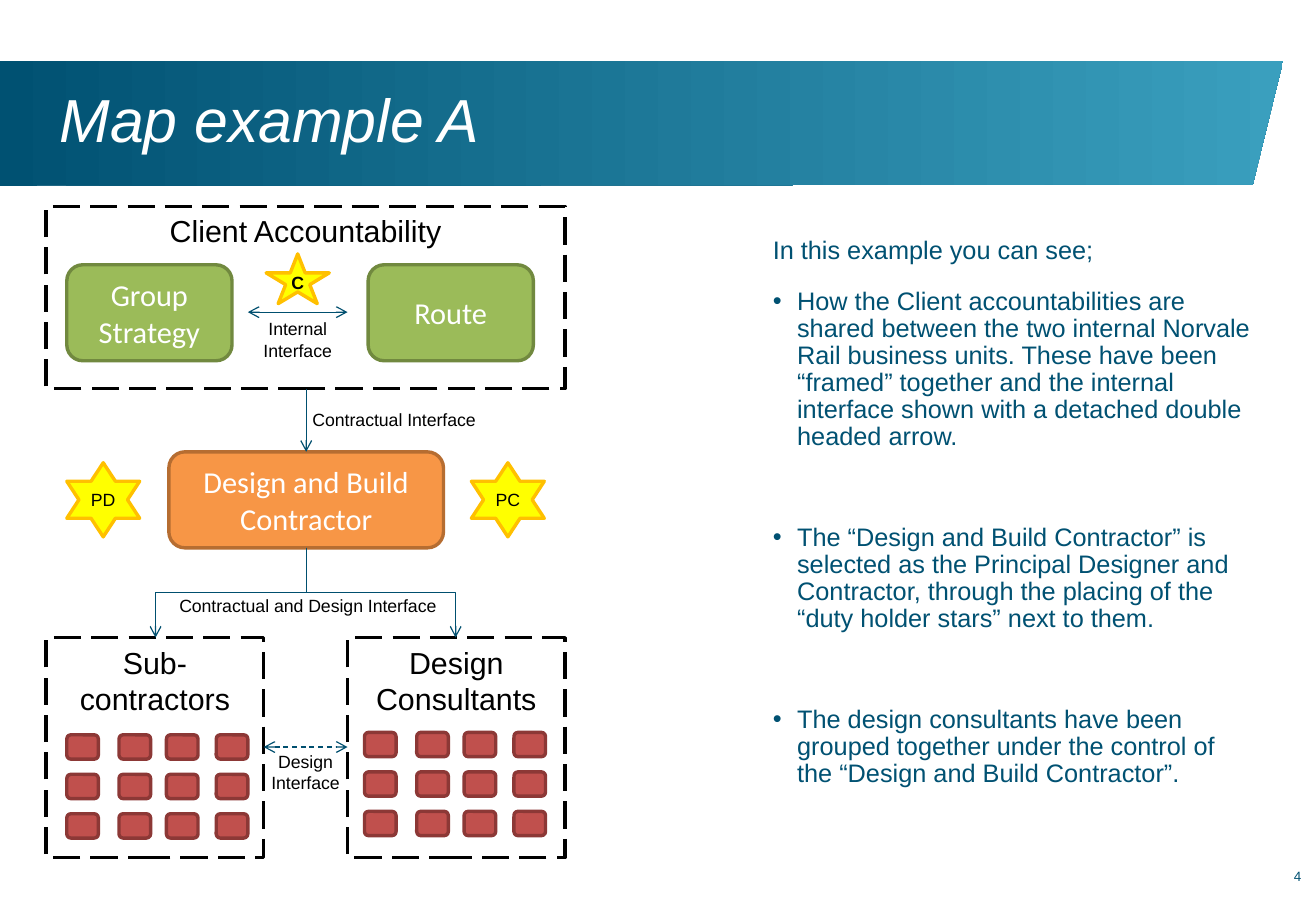
from lxml import etree
from pptx import Presentation
from pptx.dml.color import RGBColor
from pptx.enum.dml import MSO_LINE
from pptx.enum.shapes import MSO_CONNECTOR as Link, MSO_SHAPE as Shape
from pptx.enum.text import MSO_ANCHOR as Anchor, MSO_AUTO_SIZE, PP_ALIGN as Align
from pptx.oxml.ns import qn
from pptx.util import Inches, Pt

TEAL, LIGHT_TEAL, ARROW = "005172", "3A9FBE", "004F6F"
BLACK, WHITE = "000000", "FFFFFF"
GREEN, ORANGE = ("9BBB59", "71893F"), ("F79646", "B66D31")
RED, YELLOW = ("C0504D", "8C3836"), ("FFFF00", "FFC000")

TITLE = "Map example A"
INTRO = "In this example you can see;"
POINTS = [
    "How the Client accountabilities are shared between the two internal Norvale Rail "
    "business units. These have been “framed” together and the internal interface shown "
    "with a detached double headed arrow.",
    "The “Design and Build Contractor” is selected as the Principal Designer and "
    "Contractor, through the placing of the “duty holder stars” next to them.",
    "The design consultants have been grouped together under the control of the "
    "“Design and Build Contractor”.",
]
# Each entry: text, (left, top, width, height), then any colours
FRAMES = [
    ("Client Accountability", (0.38, 1.7, 4.27, 1.5)),
    ("Sub-contractors", (0.38, 5.25, 1.79, 1.81)),
    ("Design Consultants", (2.86, 5.25, 1.79, 1.81)),
]
UNITS = [
    ("Group Strategy", (0.55, 2.18, 1.36, 0.79), GREEN),
    ("Route", (3.03, 2.18, 1.36, 0.79), GREEN),
    ("Design and Build Contractor", (1.39, 3.72, 2.26, 0.79), ORANGE),
]
STARS = [
    ("C", (2.19, 2.09, 0.52, 0.41), Shape.STAR_5_POINT),
    ("PD", (0.55, 3.81, 0.6, 0.61), Shape.STAR_6_POINT),
    ("PC", (3.88, 3.81, 0.6, 0.61), Shape.STAR_6_POINT),
]
LABELS = [
    ("Internal Interface", (2.04, 2.57, 0.82, 0.45)),
    ("Contractual Interface", (2.43, 3.32, 1.63, 0.28)),
    ("Contractual and Design Interface", (1.36, 4.85, 2.35, 0.28)),
    ("Design\nInterface", (2.1, 6.13, 0.83, 0.45)),
]
# Each entry: start, end, double headed, dashed
ARROWS = [
    ((2.04, 2.57), (2.86, 2.57), True, False),
    ((2.17, 6.15), (2.86, 6.15), True, True),
    ((2.52, 3.2), (2.52, 3.72), False, False),
]
BRANCH_START, BRANCH_ENDS = (2.52, 4.51), [(3.75, 5.25), (1.28, 5.25)]
GRID_STARTS = [(0.55, 6.05), (3.0, 6.03)]
GRID_COLUMNS, GRID_ROWS, ROW_STEP = (0, 0.43, 0.82, 1.23), 3, 0.325
BLOCK_SIZE = (0.26, 0.2)


def colour(value):
    return RGBColor.from_string(value)


def inches(values):
    return [Inches(value) for value in values]


def write(holder, text, size=10.5, font="Arial", ink=BLACK, align=Align.CENTER,
          anchor=Anchor.TOP, bold=False, italic=False, wrap=True, inset=None,
          spacing=None, after=0):
    frame = holder.text_frame
    frame.text = text
    frame.auto_size = MSO_AUTO_SIZE.NONE
    frame.word_wrap = wrap
    frame.vertical_anchor = anchor
    if inset is not None:
        frame.margin_left = frame.margin_right = Inches(inset)
        frame.margin_top = frame.margin_bottom = Inches(inset)
    for para in frame.paragraphs:
        para.alignment = align
        para.space_before, para.space_after = Pt(0), Pt(after)
        if spacing:
            para.line_spacing = Pt(spacing)
        for span in para.runs:
            span.font.name, span.font.size = font, Pt(size)
            span.font.bold, span.font.italic = bold, italic
            span.font.color.rgb = colour(ink)


def add_box(page, kind, place, fill=None, line=BLACK):
    box = page.shapes.add_shape(kind, *inches(place))
    box.shadow.inherit = False
    if fill:
        box.fill.solid()
        box.fill.fore_color.rgb = colour(fill)
    else:
        box.fill.background()
        box.line.dash_style = MSO_LINE.LONG_DASH
    box.line.color.rgb = colour(line)
    box.line.width = Pt(2)
    return box


def add_arrow(page, kind, start, end, double=False, dashed=False):
    arrow = page.shapes.add_connector(kind, *inches(start + end))
    arrow.line.color.rgb = colour(ARROW)
    arrow.line.width = Pt(0.75)
    if dashed:
        arrow.line.dash_style = MSO_LINE.DASH
    line = arrow.line._get_or_add_ln()
    for tag in ("a:headEnd", "a:tailEnd") if double else ("a:tailEnd",):
        etree.SubElement(line, qn(tag), type="arrow")
    etree.SubElement(arrow._element.spPr, qn("a:effectLst"))
    return arrow


def add_branch(page, start, end):
    """Elbow arrow that leaves downwards: a sideways elbow turned by a quarter."""
    middle_x, middle_y = (start[0] + end[0]) / 2, (start[1] + end[1]) / 2
    half_drop, half_spread = (end[1] - start[1]) / 2, abs(end[0] - start[0]) / 2
    side, turn = (1, 270) if end[0] > start[0] else (-1, 90)
    arrow = add_arrow(page, Link.ELBOW,
                      (middle_x + side * half_drop, middle_y - half_spread),
                      (middle_x - side * half_drop, middle_y + half_spread))
    arrow._element.spPr.find(qn("a:xfrm")).set("rot", str(turn * 60000))


def add_band(page):
    builder = page.shapes.build_freeform(Inches(0), Inches(0.5))
    corners = [(10.56, 0.5), (10.31, 1.52), (0, 1.53)]
    builder.add_line_segments([inches(corner) for corner in corners], close=True)
    band = builder.convert_to_shape()
    band.shadow.inherit = False
    band.line.fill.background()
    band.fill.gradient()
    band.fill.gradient_angle = 0
    for stop, shade in zip(band.fill.gradient_stops, (TEAL, LIGHT_TEAL)):
        stop.color.rgb = colour(shade)
    page.shapes._spTree.insert(2, band._element)  # behind the title


def set_bullet(para, bullet):
    props = para._p.get_or_add_pPr()
    indent = Inches(0.2) if bullet else 0
    props.set("marL", str(indent))
    props.set("indent", str(-indent))
    if bullet:
        etree.SubElement(props, qn("a:buChar"), char="•")
    else:
        etree.SubElement(props, qn("a:buNone"))


def place_holder(holder, place):
    holder.left, holder.top, holder.width, holder.height = inches(place)


def main():
    deck = Presentation()
    deck.slide_width, deck.slide_height = inches((10.83, 7.5))
    page = deck.slides.add_slide(deck.slide_layouts[1])
    title, body = page.placeholders
    add_band(page)

    place_holder(title, (0.49, 0.66, 9.8, 0.7))
    write(title, TITLE, size=36, ink=WHITE, align=Align.LEFT, anchor=Anchor.MIDDLE,
          italic=True, inset=0, spacing=38)
    place_holder(body, (6.36, 1.96, 3.94, 4.92))
    write(body, "\n".join([INTRO, *POINTS]), size=15, ink=TEAL, align=Align.LEFT,
          inset=0, spacing=16, after=44)
    for number, para in enumerate(body.text_frame.paragraphs):
        set_bullet(para, bullet=number > 0)
    body.text_frame.paragraphs[0].space_after = Pt(14)

    for text, place in FRAMES:
        write(add_box(page, Shape.RECTANGLE, place), text, size=18)
    for text, place, colours in UNITS:
        unit = add_box(page, Shape.ROUNDED_RECTANGLE, place, *colours)
        write(unit, text, size=18, font="Calibri", ink=WHITE, anchor=Anchor.MIDDLE)
    for left, top in GRID_STARTS:
        for row in range(GRID_ROWS):
            for offset in GRID_COLUMNS:
                place = (left + offset, top + row * ROW_STEP, *BLOCK_SIZE)
                add_box(page, Shape.ROUNDED_RECTANGLE, place, *RED)

    for start, end, double, dashed in ARROWS:
        add_arrow(page, Link.STRAIGHT, start, end, double, dashed)
    for end in BRANCH_ENDS:
        add_branch(page, BRANCH_START, end)
    for text, place in LABELS:
        write(page.shapes.add_textbox(*inches(place)), text)
    for text, place, kind in STARS:
        write(add_box(page, kind, place, *YELLOW), text, anchor=Anchor.MIDDLE,
              bold=kind == Shape.STAR_5_POINT, wrap=False)

    page_number = page.shapes.add_textbox(*inches((10.18, 7.15, 0.53, 0.22)))
    write(page_number, "4", size=8, ink=TEAL, align=Align.RIGHT, inset=0)
    deck.save("out.pptx")


if __name__ == "__main__":
    main()
